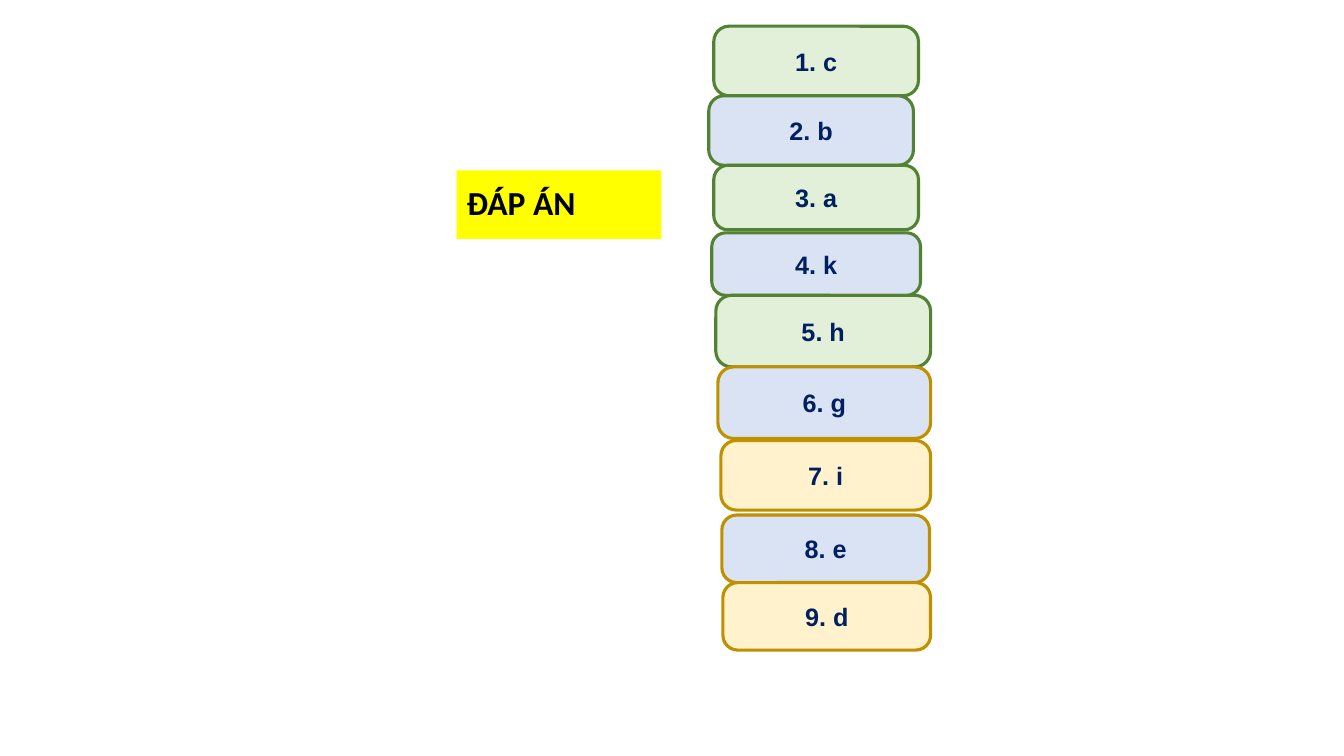
from dataclasses import dataclass

from pptx import Presentation
from pptx import util as u
from pptx.dml.color import RGBColor
from pptx.enum import shapes, text

COLORS = {
    "highlight": "FFFF00",
    "title": "000000",
    "answer": "002060",
    "blue": "DAE3F3",
    "green": "E2F0D9",
    "green_line": "548235",
    "gold": "FFF2CC",
    "gold_line": "BF9000",
}
LAST_GREEN = 5


@dataclass
class Answer:
    letter: str
    left: float
    top: float
    width: float
    height: float


ANSWERS = [
    Answer("c", 7.08, 0.26, 2.03, 0.69),
    Answer("b", 7.03, 0.95, 2.03, 0.69),
    Answer("a", 7.08, 1.64, 2.03, 0.64),
    Answer("k", 7.06, 2.31, 2.07, 0.62),
    Answer("h", 7.10, 2.93, 2.13, 0.71),
    Answer("g", 7.12, 3.64, 2.11, 0.71),
    Answer("i", 7.15, 4.37, 2.08, 0.69),
    Answer("e", 7.16, 5.11, 2.06, 0.67),
    Answer("d", 7.17, 5.78, 2.06, 0.67),
]


def color(name: str) -> RGBColor:
    return RGBColor.from_string(COLORS[name])


def write_text(shape, content: str, *, font: str, size: float, ink: str,
               align=text.PP_ALIGN.LEFT, line_spacing: float = 1.0) -> None:
    """Fill a shape with one bold, vertically centred paragraph."""
    frame = shape.text_frame
    frame.word_wrap = True
    frame.auto_size = text.MSO_AUTO_SIZE.NONE
    frame.vertical_anchor = text.MSO_ANCHOR.MIDDLE
    paragraph = frame.paragraphs[0]
    paragraph.alignment = align
    paragraph.line_spacing = line_spacing
    run = paragraph.add_run()
    run.text = content
    run.font.name = font
    run.font.size = u.Pt(size)
    run.font.bold = True
    run.font.color.rgb = color(ink)


def draw_title(slide) -> None:
    box = slide.shapes.add_textbox(
        u.Inches(4.53), u.Inches(1.69), u.Inches(2.03), u.Inches(0.68))
    box.fill.solid()
    box.fill.fore_color.rgb = color("highlight")
    write_text(box, "ĐÁP ÁN", font="Calibri", size=24, ink="title",
               line_spacing=0.9)


def draw_answer(slide, number: int, answer: Answer) -> None:
    """Draw a card: even ones are blue, odd ones take their group's colour."""
    group = "green" if number <= LAST_GREEN else "gold"
    card = slide.shapes.add_shape(
        shapes.MSO_SHAPE.ROUNDED_RECTANGLE,
        u.Inches(answer.left), u.Inches(answer.top),
        u.Inches(answer.width), u.Inches(answer.height))
    card.adjustments[0] = 0.22
    card.shadow.inherit = False
    card.fill.solid()
    card.fill.fore_color.rgb = color(group if number % 2 else "blue")
    card.line.color.rgb = color(f"{group}_line")
    card.line.width = u.Pt(2.25)
    write_text(card, f"{number}. {answer.letter}", font="Arial", size=18,
               ink="answer", align=text.PP_ALIGN.CENTER)


def main() -> None:
    presentation = Presentation()
    presentation.slide_width = u.Inches(13.33)
    presentation.slide_height = u.Inches(7.5)
    slide = presentation.slides.add_slide(presentation.slide_layouts[6])
    draw_title(slide)
    for number, answer in enumerate(ANSWERS, start=1):
        draw_answer(slide, number, answer)
    presentation.save("out.pptx")


if __name__ == "__main__":
    main()
